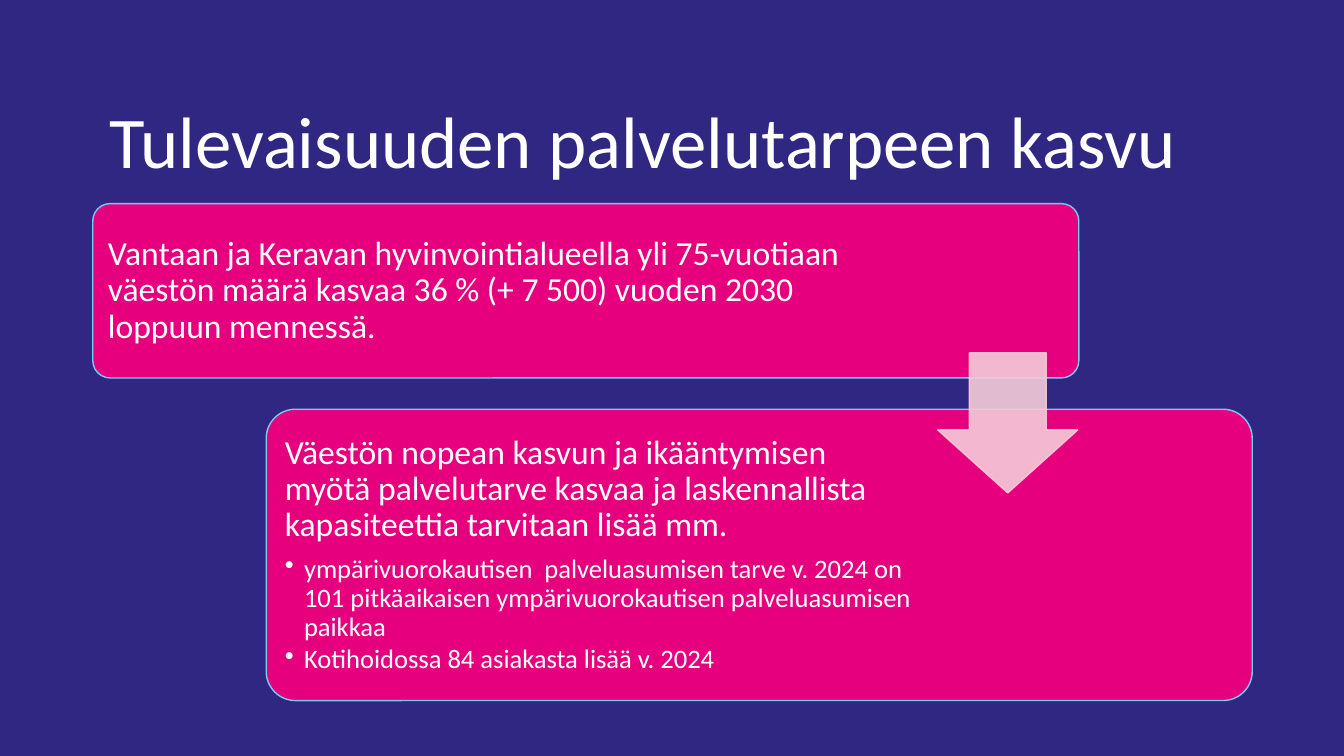
from lxml.etree import SubElement
from pptx import Presentation
from pptx.dml.color import RGBColor
from pptx.enum.shapes import MSO_SHAPE
from pptx.enum.text import MSO_ANCHOR, MSO_AUTO_SIZE, PP_ALIGN
from pptx.oxml.ns import qn
from pptx.util import Inches, Pt

COLORS = {"background": "302783", "card": "E6007E", "outline": "76CBF3",
          "arrow": "F5CCD8", "text": "FFFFFF"}
FONT = "Calibri"
CARD_WIDTH = 9.78
BULLET_INDENT = Inches(0.19)


def color(name):
    return RGBColor.from_string(COLORS[name])


def add_text(paragraph, text, size):
    paragraph.line_spacing = 0.9
    run = paragraph.add_run()
    run.text = text
    run.font.name = FONT
    run.font.size = Pt(size)
    run.font.color.rgb = color("text")


def add_bullet(paragraph):
    properties = paragraph._p.get_or_add_pPr()
    properties.set("marL", str(BULLET_INDENT))
    properties.set("indent", str(-BULLET_INDENT))
    SubElement(properties, qn("a:buChar")).set("char", "•")


def style_shape(shape, fill, line):
    shape.shadow.inherit = False
    shape.fill.solid()
    shape.fill.fore_color.rgb = color(fill)
    shape.line.color.rgb = color(line)
    shape.line.width = Pt(1)


def add_title(slide, left, top, width, height, text):
    title = slide.shapes.title
    title.left, title.top = Inches(left), Inches(top)
    title.width, title.height = Inches(width), Inches(height)
    frame = title.text_frame
    frame.auto_size = MSO_AUTO_SIZE.NONE
    frame.word_wrap = True
    frame.vertical_anchor = MSO_ANCHOR.BOTTOM
    frame.paragraphs[0].alignment = PP_ALIGN.CENTER
    add_text(frame.paragraphs[0], text, 52)


def add_card(slide, left, top, height, text_width, statement, bullets=()):
    card = slide.shapes.add_shape(
        MSO_SHAPE.ROUNDED_RECTANGLE, Inches(left), Inches(top),
        Inches(CARD_WIDTH), Inches(height))
    card.adjustments[0] = 0.1
    style_shape(card, "card", "outline")

    # Text area inset by the rounding of the corners
    inset = 0.03 * height
    box = slide.shapes.add_textbox(
        Inches(left + inset), Inches(top + inset),
        Inches(text_width), Inches(height - 2 * inset))
    frame = box.text_frame
    frame.word_wrap = True
    frame.vertical_anchor = MSO_ANCHOR.MIDDLE
    frame.margin_left = frame.margin_right = Inches(0.1)
    frame.margin_top = frame.margin_bottom = Inches(0.1)
    frame.paragraphs[0].space_after = Pt(8.4)
    add_text(frame.paragraphs[0], statement, 24)
    for bullet in bullets:
        paragraph = frame.add_paragraph()
        paragraph.level = 1
        paragraph.space_after = Pt(2.85)
        add_text(paragraph, bullet, 19)
        add_bullet(paragraph)


def add_arrow(slide, left, top, size):
    arrow = slide.shapes.add_shape(
        MSO_SHAPE.DOWN_ARROW, Inches(left), Inches(top), Inches(size), Inches(size))
    # Shaft width and head length
    arrow.adjustments[0] = 0.45
    arrow.adjustments[1] = 0.55
    arrow.adjustments[0], arrow.adjustments[1] = 0.55, 0.45
    style_shape(arrow, "arrow", "arrow")
    for fill_color in arrow._element.spPr.iter(qn("a:srgbClr")):
        SubElement(fill_color, qn("a:alpha")).set("val", "90000")


def build_slide(presentation):
    slide = presentation.slides.add_slide(presentation.slide_layouts[5])
    slide.background.fill.solid()
    slide.background.fill.fore_color.rgb = color("background")

    add_title(slide, 0.92, 0.64, 10.91, 1.24, "Tulevaisuuden palvelutarpeen kasvu")

    # Population growth and the service need that follows
    add_card(slide, 0.92, 2.02, 1.73, 7.59,
             "Vantaan ja Keravan hyvinvointialueella yli 75-vuotiaan väestön määrä "
             "kasvaa 36 % (+ 7 500) vuoden 2030 loppuun mennessä.")
    add_card(slide, 2.64, 4.06, 2.89, 6.49,
             "Väestön nopean kasvun ja ikääntymisen myötä palvelutarve kasvaa ja "
             "laskennallista kapasiteettia tarvitaan lisää mm.",
             ["ympärivuorokautisen  palveluasumisen tarve v. 2024 on 101 "
              "pitkäaikaisen ympärivuorokautisen palveluasumisen paikkaa",
              "Kotihoidossa 84 asiakasta lisää v. 2024"])
    add_arrow(slide, 9.3, 3.5, 1.39)


def main():
    presentation = Presentation()
    presentation.slide_width = Inches(13.33)
    presentation.slide_height = Inches(7.5)
    build_slide(presentation)
    presentation.save("out.pptx")


if __name__ == "__main__":
    main()
